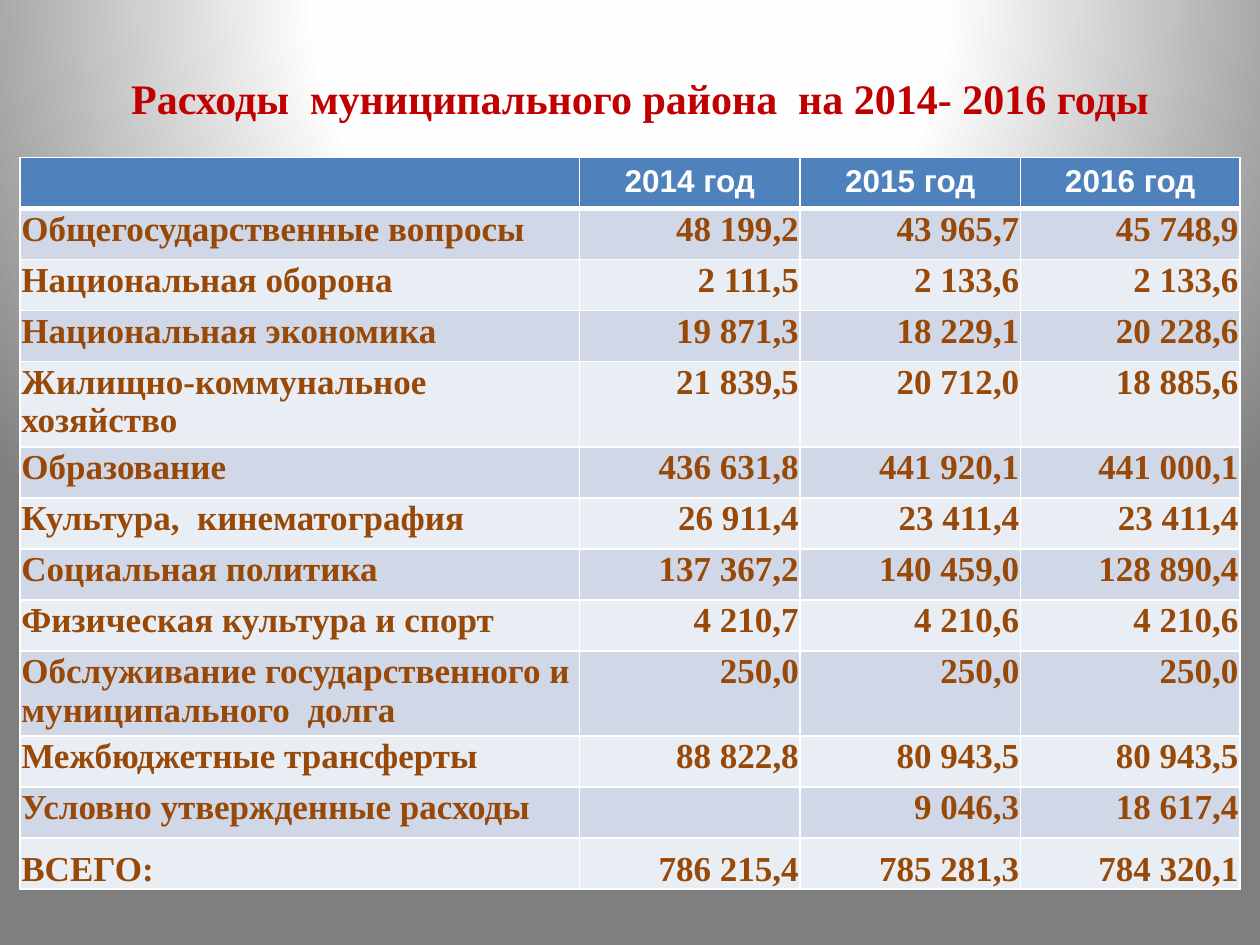
import pptx
import pptx.dml.color
import pptx.enum.text
import pptx.oxml
import pptx.oxml.ns
import pptx.util

Inches, Pt = pptx.util.Inches, pptx.util.Pt
RGB = pptx.dml.color.RGBColor.from_string
ALIGN = pptx.enum.text.PP_ALIGN
ANCHOR = pptx.enum.text.MSO_ANCHOR
NS = pptx.oxml.ns.nsdecls("a")

# Content
TITLE = "Расходы  муниципального района  на 2014- 2016 годы"
HEADER = ("", "2014 год", "2015 год", "2016 год")
EXPENSES = [
    ("Общегосударственные вопросы", "48 199,2", "43 965,7", "45 748,9"),
    ("Национальная оборона", "2 111,5", "2 133,6", "2 133,6"),
    ("Национальная экономика", "19 871,3", "18 229,1", "20 228,6"),
    ("Жилищно-коммунальное хозяйство", "21 839,5", "20 712,0", "18 885,6"),
    ("Образование", "436 631,8", "441 920,1", "441 000,1"),
    ("Культура,  кинематография", "26 911,4", "23 411,4", "23 411,4"),
    ("Социальная политика", "137 367,2", "140 459,0", "128 890,4"),
    ("Физическая культура и спорт", "4 210,7", "4 210,6", "4 210,6"),
    ("Обслуживание государственного и муниципального  долга", "250,0", "250,0", "250,0"),
    ("Межбюджетные трансферты", "88 822,8", "80 943,5", "80 943,5"),
    ("Условно утвержденные расходы", "", "9 046,3", "18 617,4"),
    ("ВСЕГО:", "786 215,4", "785 281,3", "784 320,1"),
]
COLUMN_WIDTHS = (4.44, 1.75, 1.75, 1.74)
ROW_HEIGHT = 0.405

THEME = {
    "title": ("Times New Roman", 24, "C00000"),
    "header": ("Arial", 18, "FFFFFF"),
    "body": ("Times New Roman", 20, "984807"),
    "header_fill": "4F81BD",
    "bands": ("D0D8E8", "E9EDF4"),
    "border": "FFFFFF",
    "background": ((0, "FFFFFF"), (40, "FEFEFE"), (100, "7F7F7F")),
}


def write(tf, text, style, align):
    """Put one bold paragraph into a text frame."""
    font, size, color = THEME[style]
    p = tf.paragraphs[0]
    p.text = text
    p.alignment = align
    for r in p.runs:
        r.font.name, r.font.size, r.font.bold = font, Pt(size), True
        r.font.color.rgb = RGB(color)


def paint_background(s):
    fill = s.background.fill
    fill.gradient()
    stops = "".join(f'<a:gs pos="{pos * 1000}"><a:srgbClr val="{color}"/></a:gs>'
                    for pos, color in THEME["background"])
    grad = pptx.oxml.parse_xml(
        f'<a:gradFill {NS} rotWithShape="1"><a:gsLst>{stops}</a:gsLst><a:path path="circle">'
        '<a:fillToRect l="50000" t="-80000" r="50000" b="180000"/></a:path></a:gradFill>')
    old = s.element.find(".//" + pptx.oxml.ns.qn("a:gradFill"))
    old.getparent().replace(old, grad)


def add_borders(cell, widths):
    for side, width in widths.items():
        cell._tc.get_or_add_tcPr().append(pptx.oxml.parse_xml(
            f'<a:ln{side} {NS} w="{Pt(width)}"><a:solidFill>'
            f'<a:srgbClr val="{THEME["border"]}"/></a:solidFill></a:ln{side}>'))


def fill_cell(cell, text, row, col):
    is_header, is_total = row == 0, row == len(EXPENSES)
    add_borders(cell, {"L": 1, "R": 1, "T": 3 if row == 1 else 1, "B": 3 if is_header else 1})
    cell.fill.solid()
    color = THEME["header_fill"] if is_header else THEME["bands"][(row - 1) % 2]
    cell.fill.fore_color.rgb = RGB(color)
    if not text:
        return
    if is_header:
        write(cell.text_frame, text, "header", ALIGN.CENTER)
        return
    cell.margin_left = cell.margin_right = cell.margin_top = Inches(0.01)
    cell.margin_bottom = 0
    cell.vertical_anchor = ANCHOR.BOTTOM if is_total else ANCHOR.TOP
    write(cell.text_frame, text, "body", ALIGN.RIGHT if col else ALIGN.LEFT)


prs = pptx.Presentation()
prs.slide_width, prs.slide_height = Inches(10), Inches(7.5)
s = prs.slides.add_slide(prs.slide_layouts[6])
paint_background(s)

# Title
tf = s.shapes.add_textbox(Inches(0.33), Inches(0.23), Inches(9.5), Inches(1.09)).text_frame
tf.word_wrap = True
tf.vertical_anchor = ANCHOR.MIDDLE
write(tf, TITLE, "title", ALIGN.CENTER)

# Expense table
rows = [HEADER] + EXPENSES
table = s.shapes.add_table(
    len(rows), len(HEADER), Inches(0.16), Inches(1.25),
    Inches(sum(COLUMN_WIDTHS)), Inches(ROW_HEIGHT * len(rows))).table
for column, width in zip(table.columns, COLUMN_WIDTHS):
    column.width = Inches(width)
for row, values in enumerate(rows):
    table.rows[row].height = Inches(ROW_HEIGHT)
    for col, text in enumerate(values):
        fill_cell(table.cell(row, col), text, row, col)

prs.save("out.pptx")
